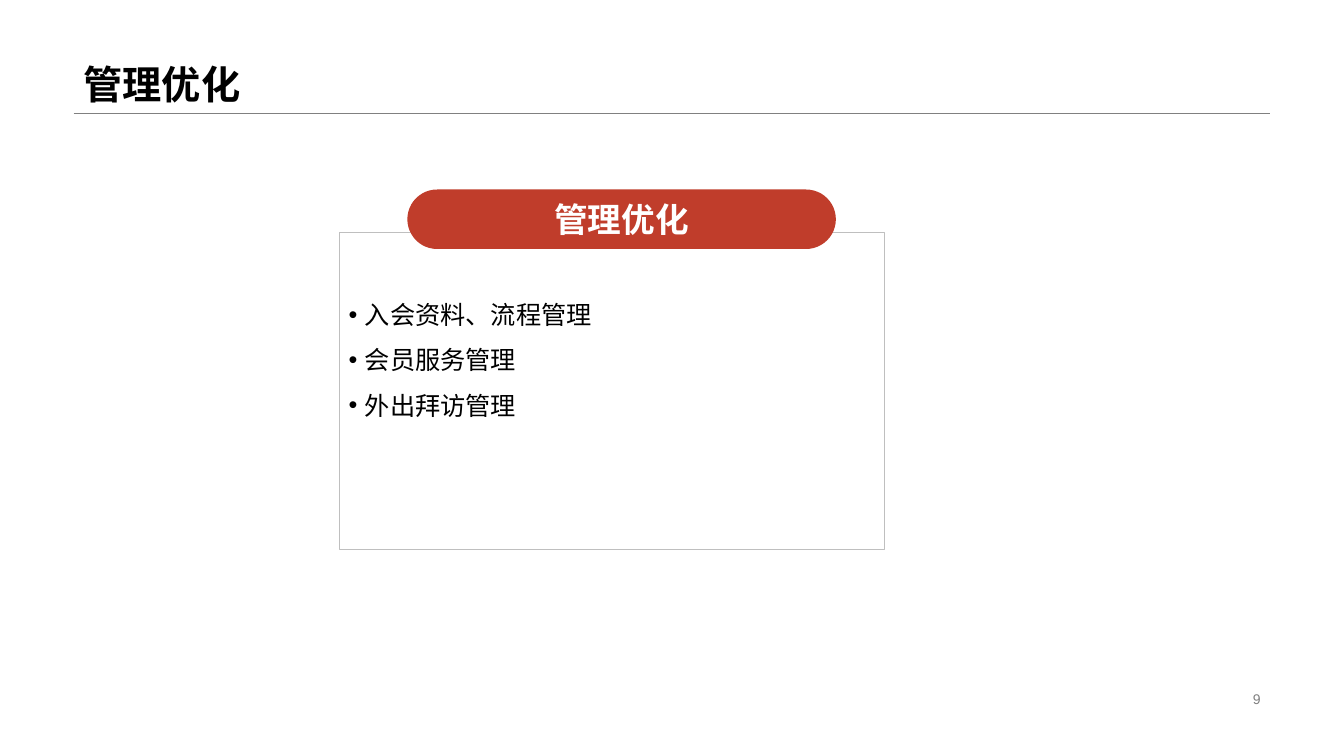
from lxml import etree
from pptx import Presentation
from pptx.dml.color import RGBColor
from pptx.enum.shapes import MSO_CONNECTOR, MSO_SHAPE
from pptx.enum.text import MSO_ANCHOR, PP_ALIGN
from pptx.oxml.ns import qn
from pptx.util import Inches, Pt

STRAIGHT = MSO_CONNECTOR.STRAIGHT
RECTANGLE, ROUNDED = MSO_SHAPE.RECTANGLE, MSO_SHAPE.ROUNDED_RECTANGLE
TOP, MIDDLE, BOTTOM = MSO_ANCHOR.TOP, MSO_ANCHOR.MIDDLE, MSO_ANCHOR.BOTTOM
LEFT, CENTER, RIGHT = PP_ALIGN.LEFT, PP_ALIGN.CENTER, PP_ALIGN.RIGHT


def rgb(color):
    return RGBColor.from_string(color)


def write(paragraph, text, size, color, align, bold=False):
    paragraph.alignment = align
    run = paragraph.add_run()
    run.text = text
    run.font.name = "Arial"
    run.font.size = Pt(size)
    run.font.bold = bold
    run.font.color.rgb = rgb(color)


presentation = Presentation()
presentation.slide_width = Inches(13.33)
presentation.slide_height = Inches(7.5)
slide = presentation.slides.add_slide(presentation.slide_layouts[5])

margin = Inches(0.73)
content_width = presentation.slide_width - 2 * margin
header_height = Inches(1.12)

rule = slide.shapes.add_connector(
    STRAIGHT, margin, header_height, margin + content_width, header_height)
rule.line.color.rgb = rgb("808080")
rule.line.width = Pt(0.25)
etree.SubElement(rule._element.spPr, qn("a:effectLst"))

heading = slide.shapes.title
heading.left, heading.top = margin, 0
heading.width, heading.height = content_width, header_height
heading.text_frame.word_wrap = True
heading.text_frame.vertical_anchor = BOTTOM
heading.text_frame.paragraphs[0].line_spacing = 0.9
write(heading.text_frame.paragraphs[0], "管理优化", 28, "000000", LEFT, True)

number_width = Inches(3.18)
page_number = slide.shapes.add_textbox(
    margin + content_width - number_width, Inches(6.82), number_width, Inches(0.23))
page_number.text_frame.word_wrap = True
page_number.text_frame.vertical_anchor = MIDDLE
write(page_number.text_frame.paragraphs[0], "9", 10, "808080", RIGHT)

panel = slide.shapes.add_shape(
    RECTANGLE, Inches(3.36), Inches(2.3), Inches(5.41), Inches(3.15))
panel.shadow.inherit = False
panel.fill.background()
panel.line.color.rgb = rgb("BFBFBF")
panel.line.width = Pt(0.25)
topics = panel.text_frame
topics.word_wrap = True
topics.vertical_anchor = TOP
topics.margin_top = Inches(0.52)
for index, topic in enumerate(["入会资料、流程管理", "会员服务管理", "外出拜访管理"]):
    paragraph = topics.add_paragraph() if index else topics.paragraphs[0]
    paragraph.line_spacing = 1.5
    write(paragraph, topic, 18, "000000", LEFT)
    properties = paragraph._p.get_or_add_pPr()
    properties.set("marL", str(Inches(0.16)))
    properties.set("indent", str(-Inches(0.16)))
    etree.SubElement(properties, qn("a:buFont")).set("typeface", "Arial")
    etree.SubElement(properties, qn("a:buChar")).set("char", "•")

banner = slide.shapes.add_shape(
    ROUNDED, Inches(4.04), Inches(1.88), Inches(4.25), Inches(0.59))
banner.adjustments[0] = 0.5
banner.shadow.inherit = False
banner.fill.solid()
banner.fill.fore_color.rgb = rgb("C03D2B")
banner.line.fill.background()
banner.text_frame.word_wrap = True
banner.text_frame.vertical_anchor = MIDDLE
write(banner.text_frame.paragraphs[0], "管理优化", 24, "FFFFFF", CENTER, True)

presentation.save("out.pptx")
